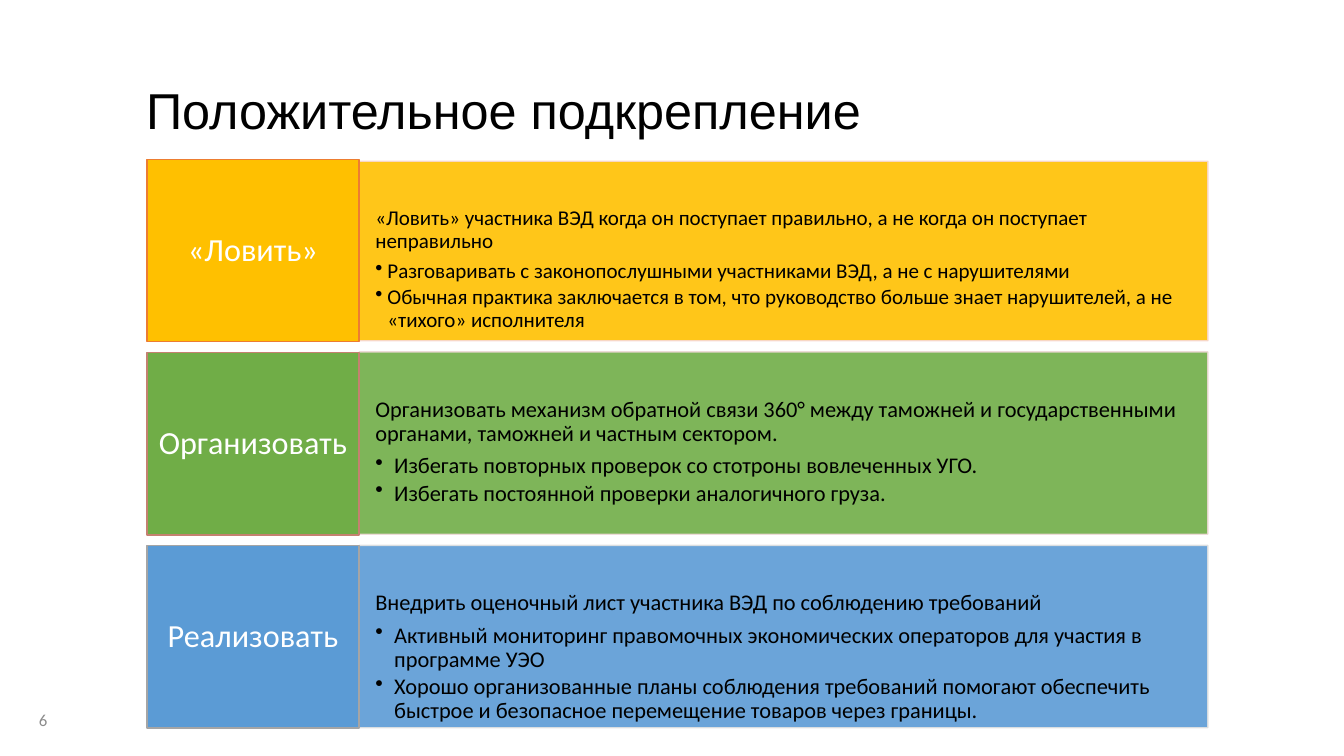
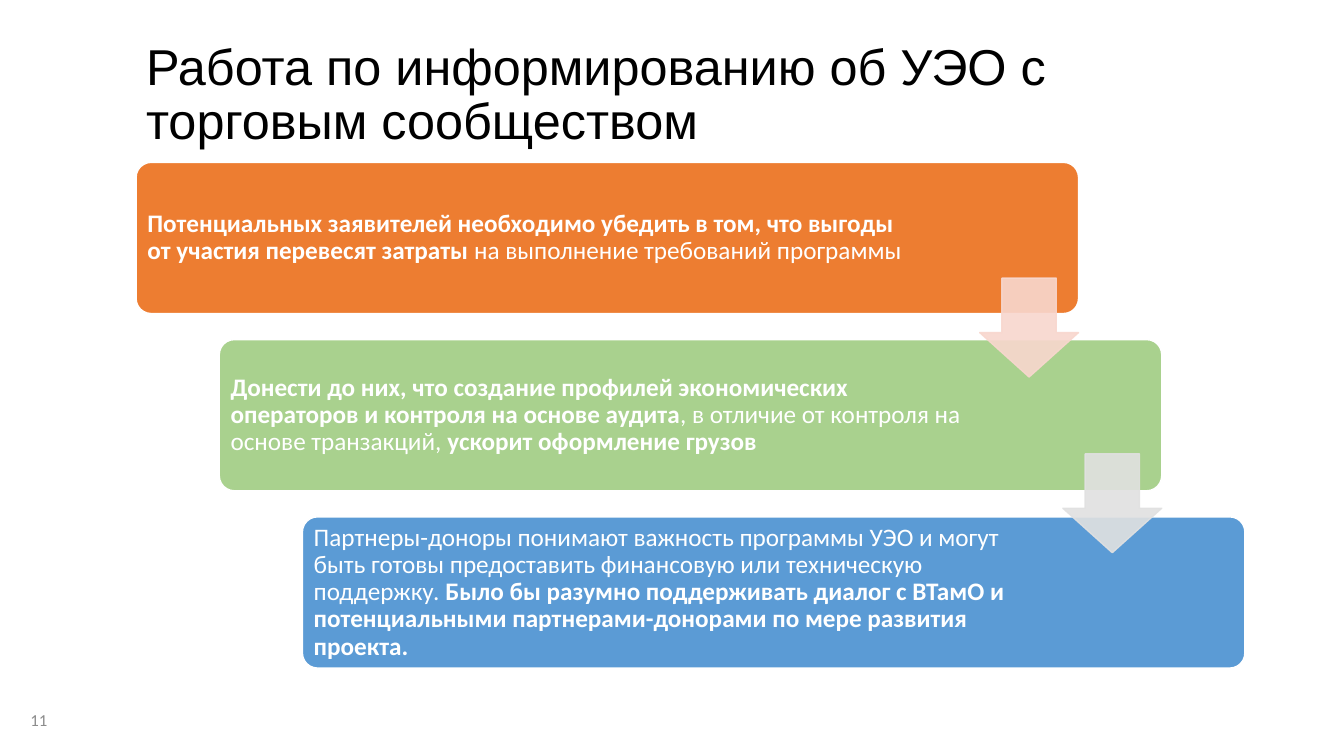
"""Build two slides on positive reinforcement and outreach to the trade community."""
from dataclasses import dataclass

from lxml import etree
from pptx import Presentation
from pptx.dml.color import RGBColor
from pptx.enum.shapes import MSO_SHAPE
from pptx.enum.text import MSO_ANCHOR, PP_ALIGN
from pptx.oxml.ns import qn
from pptx.util import Pt

RECT, ROUNDED, DOWN = MSO_SHAPE.RECTANGLE, MSO_SHAPE.ROUNDED_RECTANGLE, MSO_SHAPE.DOWN_ARROW
TOP, MIDDLE = MSO_ANCHOR.TOP, MSO_ANCHOR.MIDDLE
LEFT, CENTER, RIGHT = PP_ALIGN.LEFT, PP_ALIGN.CENTER, PP_ALIGN.RIGHT


@dataclass(frozen=True)
class Theme:
    """Colours, fonts and type sizes of the deck."""
    black: str = "000000"
    white: str = "FFFFFF"
    grey: str = "8C8C8C"
    silver: str = "A5A5A5"
    mist: str = "E1E1E1"
    rose: str = "F8D7CE"
    blush: str = "EDD9D7"
    clay: str = "C48170"
    orange: str = "ED7D31"
    amber: str = "FFC000"
    green: str = "70AD47"
    light_green: str = "A9D18E"
    blue: str = "5B9BD5"
    heading: str = "Arial"
    body: str = "Calibri"
    title_size: float = 36
    label_size: float = 23
    step_size: float = 18
    number_size: float = 12


THEME = Theme()

REINFORCEMENT = {
    "title": "Положительное подкрепление", "number": "6", "title_top": 28.8,
    "rows": [
        {"label": "«Ловить»", "fill": THEME.amber, "edge": THEME.orange, "rim": THEME.rose,
         "top": 115.2, "height": 128.2, "size": 15, "indent": 8.64,
         "lead": "«Ловить» участника ВЭД когда он поступает правильно, "
                 "а не когда он поступает неправильно",
         "bullets": ["Разговаривать с законопослушными участниками ВЭД, а не с нарушителями",
                     "Обычная практика заключается в том, что руководство больше знает "
                     "нарушителей, а не «тихого» исполнителя"]},
        {"label": "Организовать", "fill": THEME.green, "edge": THEME.clay, "rim": THEME.blush,
         "top": 251.3, "height": 130.3, "size": 16, "indent": 13.5,
         "lead": "Организовать механизм обратной связи 360° между таможней и "
                 "государственными органами, таможней и частным сектором.",
         "bullets": ["Избегать повторных проверок со стотроны вовлеченных УГО.",
                     "Избегать постоянной проверки аналогичного груза."]},
        {"label": "Реализовать", "fill": THEME.blue, "edge": THEME.silver, "rim": THEME.mist,
         "top": 389.5, "height": 130.3, "size": 16, "indent": 13.5,
         "lead": "Внедрить оценочный лист участника ВЭД по соблюдению требований",
         "bullets": ["Активный мониторинг правомочных экономических операторов для участия "
                     "в программе УЭО",
                     "Хорошо организованные планы соблюдения требований помогают обеспечить "
                     "быстрое и безопасное перемещение товаров через границы."]},
    ],
}

OUTREACH = {
    "title": "Работа по информированию об УЭО с торговым сообществом",
    "number": "11", "title_top": 16.6,
    "steps": [
        (THEME.orange, 116, [
            ("Потенциальных заявителей необходимо убедить в том, что выгоды от участия "
             "перевесят затраты ", True),
            ("на выполнение требований программы", False)]),
        (THEME.light_green, 135, [
            ("Донести до них, что создание профилей экономических операторов и контроля "
             "на основе аудита", True),
            (", в отличие от контроля на основе транзакций, ", False),
            ("ускорит оформление грузов", True)]),
        (THEME.blue, 135, [
            ("Партнеры-доноры понимают важность программы УЭО и могут быть готовы "
             "предоставить финансовую или техническую поддержку. ", False),
            ("Было бы разумно поддерживать диалог с ВТамО и потенциальными "
             "партнерами-донорами по мере развития проекта.", True)]),
    ],
    "arrows": [THEME.rose, THEME.mist],
}

LABEL_LEFT, LABEL_TOP, LABEL_WIDTH, LABEL_HEIGHT, LABEL_PITCH = 105, 113.8, 151.6, 130.3, 138
BODY_WIDTH = 606.2
STEP_LEFT, STEP_TOP, STEP_WIDTH, STEP_HEIGHT = 97.2, 116, 673.2, 108
STEP_SHIFT, STEP_PITCH = 59.4, 126.6
ARROW_LEFT, ARROW_TOP, ARROW_SIDE, ARROW_PITCH = 699.8, 198.7, 70.6, 125.5


def set_frame(shape, anchor, insets):
    """Set wrapping, anchor and insets (left, top, right, bottom)."""
    frame = shape.text_frame
    frame.word_wrap = True
    frame.vertical_anchor = anchor
    frame.margin_left, frame.margin_top, frame.margin_right, frame.margin_bottom = map(Pt, insets)
    return frame


def style_para(para, size, color, face=THEME.body, align=LEFT, after=0.0):
    """Format a paragraph and its runs."""
    para.alignment = align
    para.line_spacing = 0.9
    para.space_before = Pt(0)
    para.space_after = Pt(after)
    for span in para.runs:
        span.font.size = Pt(size)
        span.font.name = face
        span.font.color.rgb = RGBColor.from_string(color)


def add_bullet(para, indent):
    """Give a paragraph a hanging bullet."""
    para.level = 1
    props = para._p.get_or_add_pPr()
    props.set("marL", str(Pt(indent)))
    props.set("indent", str(-Pt(indent)))
    etree.SubElement(props, qn("a:buChar"), char="•")


def add_block(page, kind, place, fill, line, opacity=100):
    """Add a filled, outlined shape."""
    shape = page.shapes.add_shape(kind, *map(Pt, place))
    shape.shadow.inherit = False
    shape.line.width = Pt(1)
    for paint, color in ((shape.fill, fill), (shape.line.fill, line)):
        paint.solid()
        paint.fore_color.rgb = RGBColor.from_string(color)
    if opacity < 100:
        for tint in shape._element.spPr.iter(qn("a:srgbClr")):
            etree.SubElement(tint, qn("a:alpha"), val=str(opacity * 1000))
    return shape


def add_text(page, place, text, size, color, face, align):
    """Add a one-paragraph text box."""
    box = page.shapes.add_textbox(*map(Pt, place))
    frame = set_frame(box, MIDDLE, (7.2, 3.6, 7.2, 3.6))
    frame.text = text
    style_para(frame.paragraphs[0], size, color, face, align)


def start_page(deck, content):
    """Add a blank page with its title and number."""
    page = deck.slides.add_slide(deck.slide_layouts[6])
    add_text(page, (97.2, content["title_top"], 728.6, 104.4), content["title"],
             THEME.title_size, THEME.black, THEME.heading, LEFT)
    add_text(page, (0, 500.4, 41, 28.8), content["number"],
             THEME.number_size, THEME.grey, THEME.body, RIGHT)
    return page


def build_reinforcement(deck):
    """Draw the rows of labels with explanations."""
    page = start_page(deck, REINFORCEMENT)
    for index, row in enumerate(REINFORCEMENT["rows"]):
        size = row["size"]
        place = (LABEL_LEFT + LABEL_WIDTH, row["top"], BODY_WIDTH, row["height"])
        body = add_block(page, RECT, place, row["fill"], row["rim"], 90)
        frame = set_frame(body, TOP, (11.5, 33.1, 11.5, 0))
        frame.text = row["lead"]
        style_para(frame.paragraphs[0], size, THEME.black, after=0.35 * size)
        for text in row["bullets"]:
            para = frame.add_paragraph()
            para.text = text
            add_bullet(para, row["indent"])
            style_para(para, size, THEME.black, after=0.15 * size)

        place = (LABEL_LEFT, LABEL_TOP + index * LABEL_PITCH, LABEL_WIDTH, LABEL_HEIGHT)
        label = add_block(page, RECT, place, row["fill"], row["edge"])
        frame = set_frame(label, MIDDLE, (7.9, 13, 7.9, 13))
        frame.text = row["label"]
        style_para(frame.paragraphs[0], THEME.label_size, THEME.white, align=CENTER)


def build_outreach(deck):
    """Draw the staircase of steps joined by arrows."""
    page = start_page(deck, OUTREACH)
    for index, (fill, right_inset, spans) in enumerate(OUTREACH["steps"]):
        place = (STEP_LEFT + index * STEP_SHIFT, STEP_TOP + index * STEP_PITCH,
                 STEP_WIDTH, STEP_HEIGHT)
        step = add_block(page, ROUNDED, place, fill, THEME.white)
        step.adjustments[0] = 0.1
        para = set_frame(step, MIDDLE, (4.9, 2, right_inset, 2)).paragraphs[0]
        for text, bold in spans:
            span = para.add_run()
            span.text = text
            span.font.bold = bold
        style_para(para, THEME.step_size, THEME.white)
    for index, color in enumerate(OUTREACH["arrows"]):
        place = (ARROW_LEFT + index * STEP_SHIFT, ARROW_TOP + index * ARROW_PITCH,
                 ARROW_SIDE, ARROW_SIDE)
        arrow = add_block(page, DOWN, place, color, color, 90)
        arrow.adjustments[0] = 0.55
        arrow.adjustments[1] = 0.45


def main():
    """Build and save the deck."""
    deck = Presentation()
    deck.slide_width, deck.slide_height = Pt(960), Pt(540)
    build_reinforcement(deck)
    build_outreach(deck)
    deck.save("out.pptx")


if __name__ == "__main__":
    main()
